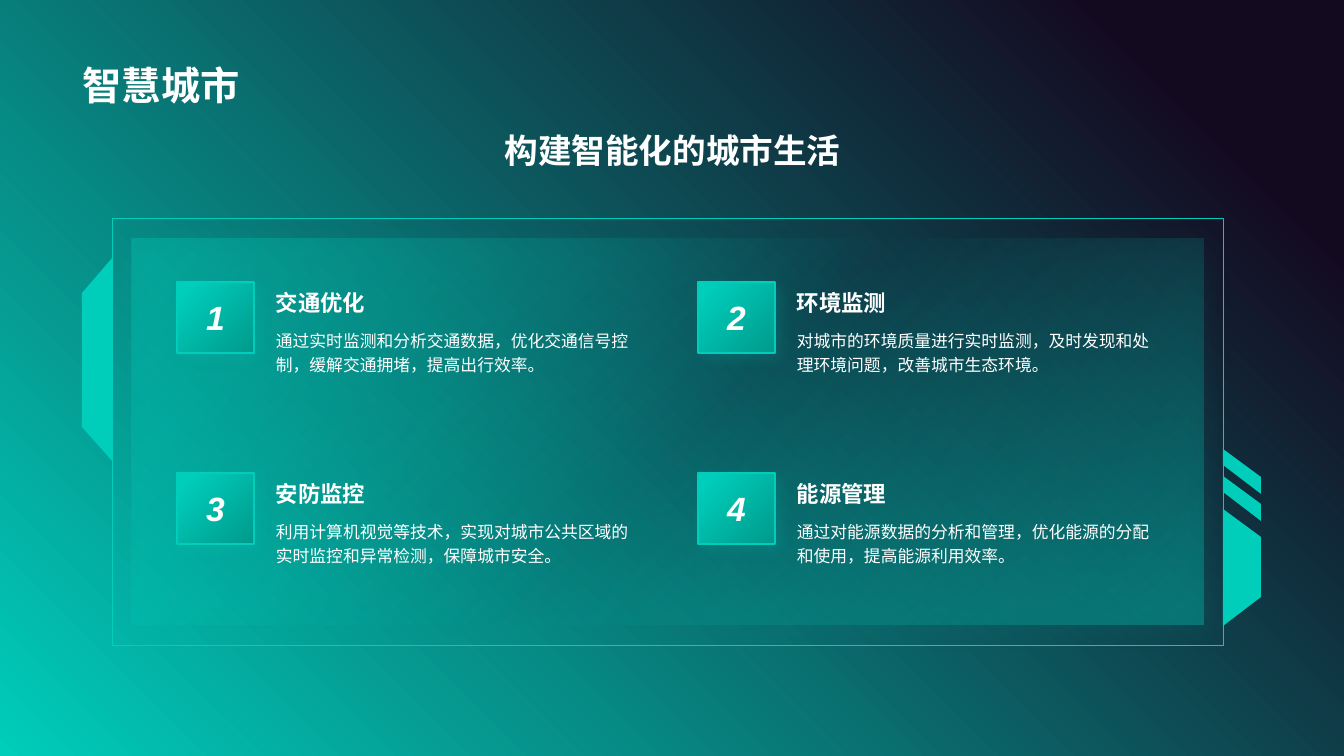
from dataclasses import dataclass

from lxml.etree import SubElement
from pptx import Presentation
from pptx.dml.color import RGBColor
from pptx.enum.shapes import MSO_SHAPE as Shape
from pptx.enum.text import MSO_ANCHOR as Anchor, PP_ALIGN as Align
from pptx.oxml.ns import qn
from pptx.util import Pt

TITLE = "智慧城市"
SUBTITLE = "构建智能化的城市生活"
TOPICS = [
    ("交通优化", "通过实时监测和分析交通数据，优化交通信号控制，缓解交通拥堵，提高出行效率。"),
    ("环境监测", "对城市的环境质量进行实时监测，及时发现和处理环境问题，改善城市生态环境。"),
    ("安防监控", "利用计算机视觉等技术，实现对城市公共区域的实时监控和异常检测，保障城市安全。"),
    ("能源管理", "通过对能源数据的分析和管理，优化能源的分配和使用，提高能源利用效率。"),
]


@dataclass(frozen=True)
class Theme:
    font: str = "Arial"
    text: str = "FFFFFF"
    accent: str = "00CDBA"
    deep: str = "009A8C"
    night: str = "140A20"
    title: int = 28
    subtitle: int = 24
    number: int = 24
    heading: int = 16
    body: int = 12


THEME = Theme()
SCALE = 12192000 / 1344
SLIDE = (1344, 756)
PANEL = (132, 239, 1072, 386)
FRAME = (113, 219, 1111, 427)
LEFT_TAB = [[(113, 257), (82, 293), (82, 427), (113, 462)]]
RIGHT_X, RIGHT_WIDTH, SLOPE = 1223, 38, 28
RIGHT_BARS = [(509, 626, 597), (476, 492, 521), (449, 465, 494)]
RIGHT_TAB = [
    [(RIGHT_X, top), (RIGHT_X + RIGHT_WIDTH, top + SLOPE),
     (RIGHT_X + RIGHT_WIDTH, outer), (RIGHT_X, inner)]
    for top, inner, outer in RIGHT_BARS
]
GRID_X, GRID_Y, COLUMN_STEP, ROW_STEP = 177, 282, 521, 191


def emu(px):
    return round(px * SCALE)


def add_colour(parent, colour, alpha=100):
    node = SubElement(parent, qn("a:srgbClr"), val=colour)
    if alpha < 100:
        SubElement(node, qn("a:alpha"), val=str(alpha * 1000))


def paint_gradient(fill, element, stops, angle):
    fill.gradient()
    fill.gradient_angle = 360 - angle
    stop_list = element.find(".//" + qn("a:gsLst"))
    for stop in list(stop_list):
        stop_list.remove(stop)
    for position, colour, alpha in stops:
        add_colour(SubElement(stop_list, qn("a:gs"), pos=str(position * 1000)), colour, alpha)


def add_shadow(shape, alpha, blur, distance, direction):
    effects = shape.element.spPr.find(qn("a:effectLst"))
    shadow = SubElement(
        effects, qn("a:outerShdw"), blurRad=str(Pt(blur)), dist=str(Pt(distance)),
        dir=str(direction * 60000), algn="tl", rotWithShape="0")
    add_colour(shadow, THEME.accent, alpha)


def set_line(shape, width=None):
    if width is None:
        shape.line.fill.background()
    else:
        shape.line.color.rgb = RGBColor.from_string(THEME.accent)
        shape.line.width = Pt(width)


def add_shape(page, kind, area, line=None):
    shape = page.shapes.add_shape(kind, *map(emu, area))
    shape.shadow.inherit = False
    set_line(shape, line)
    return shape


def add_outline(page, contours):
    builder = None
    for start, *rest in contours:
        if builder is None:
            builder = page.shapes.build_freeform(*start, scale=SCALE)
        else:
            builder.move_to(*start)
        builder.add_line_segments(rest, close=True)
    shape = builder.convert_to_shape()
    shape.shadow.inherit = False
    shape.fill.solid()
    shape.fill.fore_color.rgb = RGBColor.from_string(THEME.accent)
    set_line(shape)


def write(shape, text, size, bold=False, italic=False, align=Align.LEFT,
          anchor=Anchor.TOP, wrap=True, spacing=None):
    frame = shape.text_frame
    frame.word_wrap = wrap
    frame.vertical_anchor = anchor
    frame.text = text
    para = frame.paragraphs[0]
    para.alignment = align
    if spacing:
        para.line_spacing = spacing
    font = para.runs[0].font
    font.name, font.size, font.bold, font.italic = THEME.font, Pt(size), bold, italic
    font.color.rgb = RGBColor.from_string(THEME.text)


def add_text(page, area, text, size, **style):
    write(page.shapes.add_textbox(*map(emu, area)), text, size, **style)


def add_topic(page, index, heading, body):
    row, column = divmod(index, 2)
    x, y = GRID_X + column * COLUMN_STEP, GRID_Y + row * ROW_STEP
    add_text(page, (x + 89, y - 25, 379, 64), heading, THEME.heading,
             bold=True, anchor=Anchor.BOTTOM)
    add_text(page, (x + 89, y + 40, 379, 83), body, THEME.body, spacing=1.2)
    badge = add_shape(page, Shape.PARALLELOGRAM, (x, y, 77, 71), line=1)
    badge.adjustments[0] = 0
    paint_gradient(badge.fill, badge.element,
                   [(0, THEME.deep, 100), (89, THEME.accent, 100)], 225)
    add_shadow(badge, 15, 10, 5, 45)
    write(badge, str(index + 1), THEME.number, bold=True, italic=True,
          align=Align.CENTER, anchor=Anchor.MIDDLE, wrap=False)


def main():
    deck = Presentation()
    deck.slide_width, deck.slide_height = map(emu, SLIDE)
    page = deck.slides.add_slide(deck.slide_layouts[6])
    paint_gradient(page.background.fill, page.element,
                   [(0, THEME.accent, 100), (88, THEME.night, 100)], 315)

    add_text(page, (73, 14, 1198, 99), TITLE, THEME.title, bold=True, anchor=Anchor.BOTTOM)
    add_text(page, (73, 125, 1199, 75), SUBTITLE, THEME.subtitle, bold=True, align=Align.CENTER)

    panel = add_shape(page, Shape.RECTANGLE, PANEL)
    paint_gradient(panel.fill, panel.element,
                   [(0, THEME.accent, 34), (52, THEME.accent, 0), (100, THEME.accent, 34)], 45)
    add_shadow(panel, 29, 21, 4, 40)
    add_shape(page, Shape.RECTANGLE, FRAME, line=0.75).fill.background()
    for contours in (LEFT_TAB, RIGHT_TAB):
        add_outline(page, contours)

    for index, (heading, body) in enumerate(TOPICS):
        add_topic(page, index, heading, body)
    deck.save("out.pptx")


if __name__ == "__main__":
    main()
